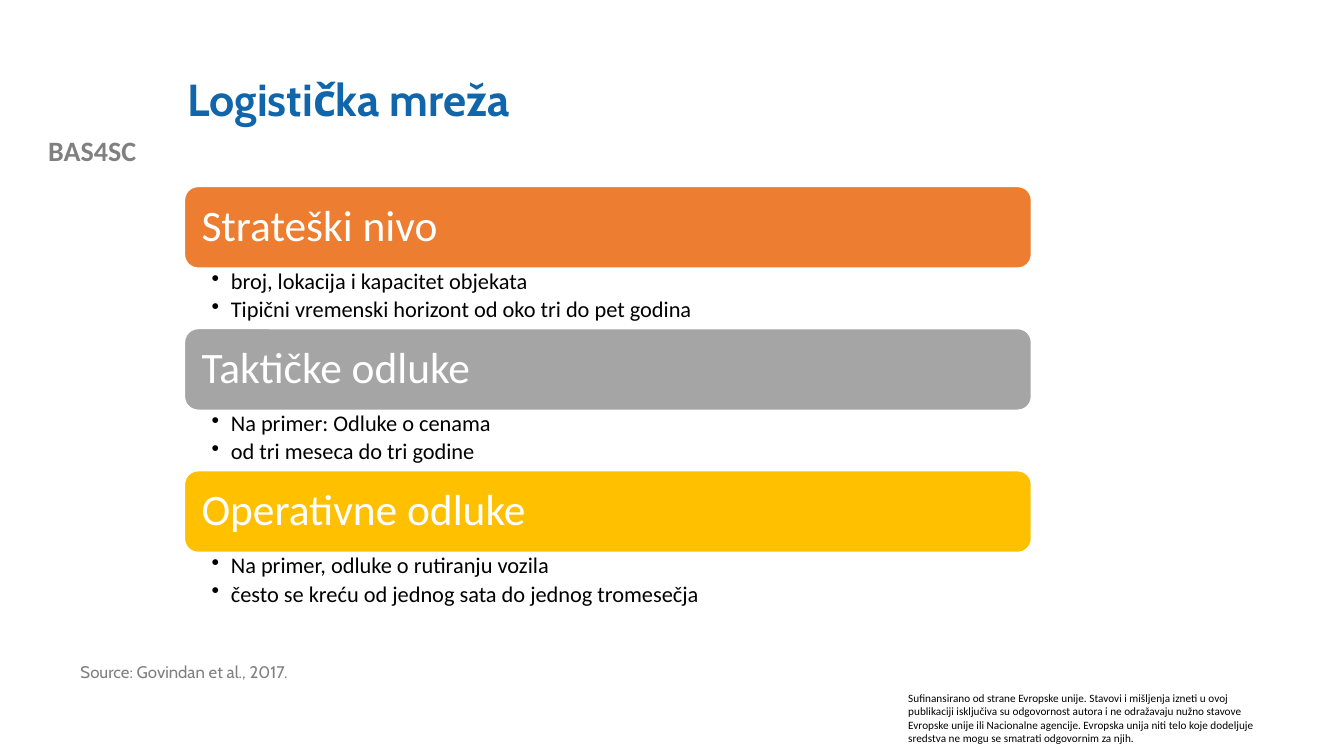
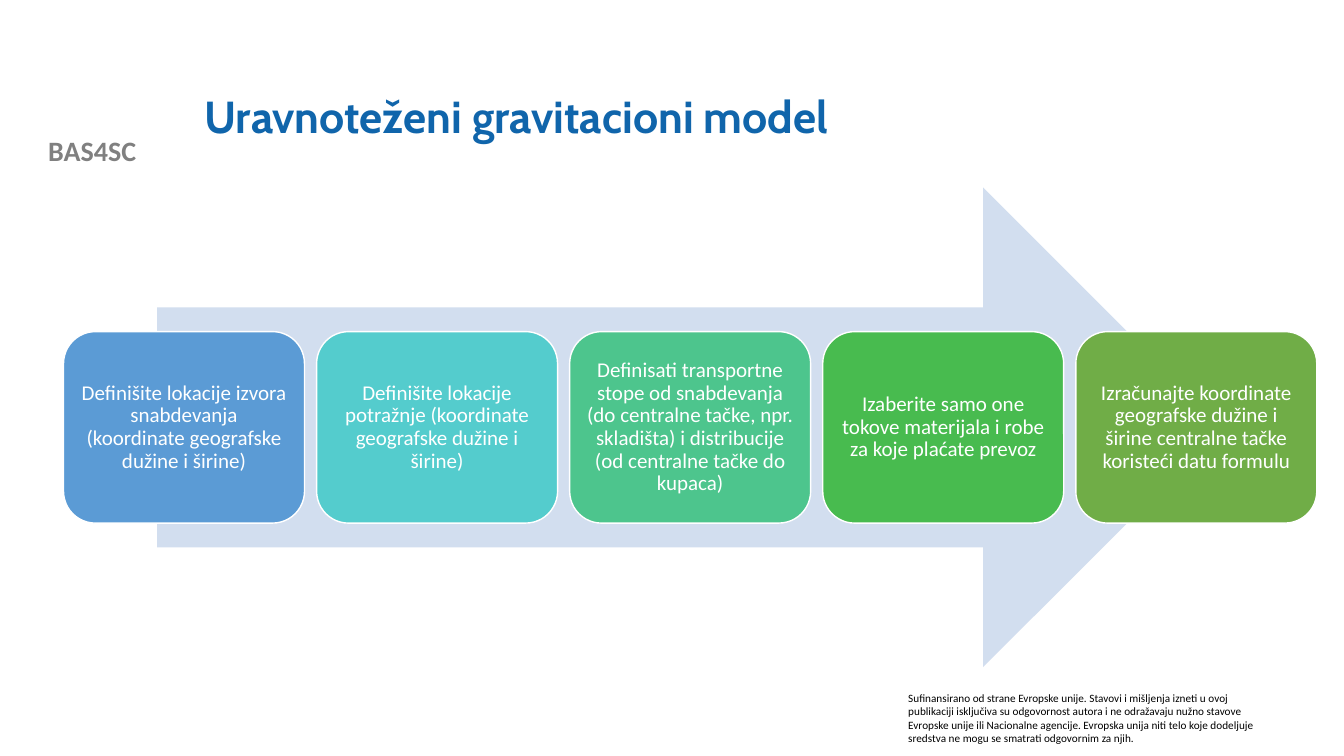
"""Build two slides on logistics network decisions and the gravity model."""
import pptx
import pptx.dml.color
import pptx.enum.shapes
import pptx.enum.text
import pptx.util
from lxml import etree

Inches = pptx.util.Inches
Pt = pptx.util.Pt
color = pptx.dml.color.RGBColor.from_string
Shape = pptx.enum.shapes.MSO_SHAPE
Align = pptx.enum.text.PP_ALIGN
Anchor = pptx.enum.text.MSO_ANCHOR

BLUE, GREY, BLACK, WHITE = "1065AB", "808080", "000000", "FFFFFF"
BODY_FONT, TITLE_FONT = "Calibri", "Cabin"
DISCLAIMER = (
    "Sufinansirano od strane Evropske unije. Stavovi i mišljenja izneti u ovoj "
    "publikaciji isključiva su odgovornost autora i ne odražavaju nužno stavove "
    "Evropske unije ili Nacionalne agencije. Evropska unija niti telo koje dodeljuje "
    "sredstva ne mogu se smatrati odgovornim za njih."
)


def add_text(page, place, lines, size, ink, font=BODY_FONT, bold=False,
             align=Align.LEFT, anchor=Anchor.TOP, spacing=1.0,
             margins=(0.1, 0.05, 0.1, 0.05), bullet=False, card=None):
    """Add a text box, or a rounded card when a card colour is given."""
    place = [Inches(length) for length in place]
    if card:
        box = page.shapes.add_shape(Shape.ROUNDED_RECTANGLE, *place)
        box.shadow.inherit = False
        box.fill.solid()
        box.fill.fore_color.rgb = color(card)
        box.line.color.rgb = color(WHITE)
        box.line.width = Pt(1)
    else:
        box = page.shapes.add_textbox(*place)
    frame = box.text_frame
    frame.word_wrap = True
    frame.vertical_anchor = anchor
    (frame.margin_left, frame.margin_top,
     frame.margin_right, frame.margin_bottom) = [Inches(gap) for gap in margins]
    frame.text = "\n".join(lines)
    for paragraph in frame.paragraphs:
        paragraph.alignment = align
        paragraph.line_spacing = spacing
        if bullet:
            paragraph.space_after = Pt(3)
            properties = paragraph._p.get_or_add_pPr()
            properties.set("marL", str(Inches(0.19)))
            properties.set("indent", str(-Inches(0.19)))
            mark = etree.SubElement(properties, pptx.oxml.ns.qn("a:buChar"))
            mark.set("char", "•")
        paragraph.font.name = font
        paragraph.font.size = Pt(size)
        paragraph.font.bold = bold
        paragraph.font.color.rgb = color(ink)


def add_page(deck, title, left, top):
    """Add a blank page with the shared title, project name and disclaimer."""
    page = deck.slides.add_slide(deck.slide_layouts[6])
    add_text(page, (0, 1.28, 1.83, 0.44), ["BAS4SC"], 20, GREY,
             bold=True, align=Align.CENTER)
    add_text(page, (8.91, 6.81, 3.74, 0.64), [DISCLAIMER], 8, BLACK)
    add_text(page, (left, top, 10.66, 1.22), [title], 32, BLUE, TITLE_FONT,
             bold=True, anchor=Anchor.MIDDLE, spacing=0.9)
    return page


deck = pptx.Presentation()
deck.slide_width = Inches(13.33)
deck.slide_height = Inches(7.5)

page = add_page(deck, "Logistička mreža", 1.76, 0.4)
add_text(page, (0.7, 6.52, 6.67, 0.3), ["Source: Govindan et al., 2017."],
         12, GREY, TITLE_FONT)
levels = [
    ("Strateški nivo", "ED7D31",
     ["broj, lokacija i kapacitet objekata",
      "Tipični vremenski horizont od oko tri do pet godina"]),
    ("Taktičke odluke", "A5A5A5",
     ["Na primer: Odluke o cenama", "od tri meseca do tri godine"]),
    ("Operativne odluke", "FFC000",
     ["Na primer, odluke o rutiranju vozila",
      "često se kreću od jednog sata do jednog tromesečja"]),
]
header_height, detail_height = 0.81, 0.6
for index, (heading, fill, details) in enumerate(levels):
    top = 1.85 + index * (header_height + detail_height)
    add_text(page, (1.83, top, 8.4, header_height), [heading], 31, WHITE,
             anchor=Anchor.MIDDLE, spacing=0.9, margins=(0.13,) * 4, card=fill)
    add_text(page, (1.83, top + header_height, 8.4, detail_height), details, 16, BLACK,
             spacing=0.9, margins=(0.27, 0.02, 0.12, 0.02), bullet=True)

page = add_page(deck, "Uravnoteženi gravitacioni model", 1.93, 0.57)
arrow = page.shapes.add_shape(Shape.RIGHT_ARROW, Inches(1.56), Inches(1.86),
                              Inches(10.57), Inches(4.76))
arrow.shadow.inherit = False
arrow.fill.solid()
arrow.fill.fore_color.rgb = color("D2DEEF")
arrow.line.fill.background()
steps = [
    ("5B9BD5", "Definišite lokacije izvora snabdevanja (koordinate geografske "
               "dužine i širine)"),
    ("54CCCD", "Definišite lokacije potražnje (koordinate geografske dužine i širine)"),
    ("4DC58D", "Definisati transportne stope od snabdevanja (do centralne tačke, npr. "
               "skladišta) i distribucije (od centralne tačke do kupaca)"),
    ("48BB4F", "Izaberite samo one tokove materijala i robe za koje plaćate prevoz"),
    ("70AD47", "Izračunajte koordinate geografske dužine i širine centralne tačke "
               "koristeći datu formulu"),
]
step_width, step_gap = 2.39, 0.12
for index, (fill, text) in enumerate(steps):
    left = 0.63 + index * (step_width + step_gap)
    add_text(page, (left, 3.29, step_width, 1.9), [text], 15, WHITE,
             align=Align.CENTER, anchor=Anchor.MIDDLE, spacing=0.9,
             margins=(0.06,) * 4, card=fill)

deck.save("out.pptx")
